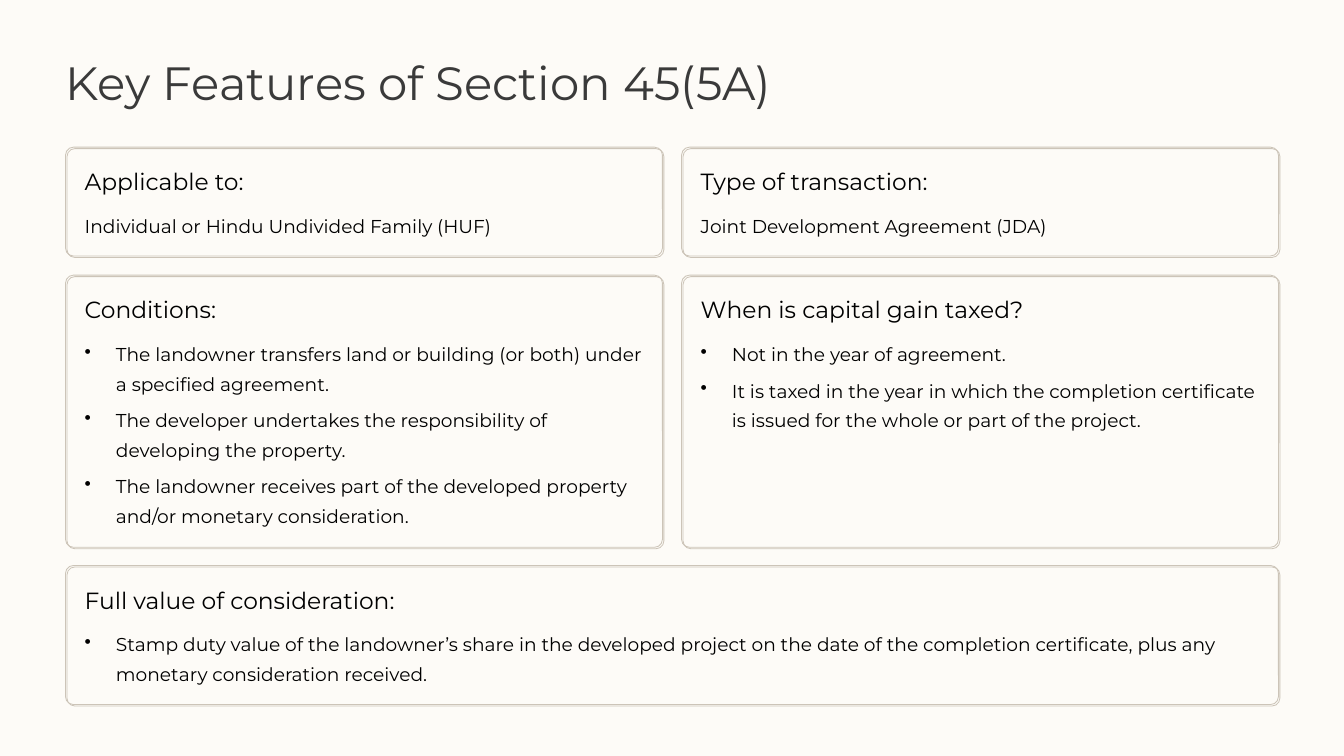
import lxml.etree
import pptx
import pptx.dml.color
import pptx.enum.shapes
import pptx.enum.text
import pptx.oxml.ns
import pptx.util

Inches = pptx.util.Inches
Pt = pptx.util.Pt
qn = pptx.oxml.ns.qn

FONT = "Montserrat"
PAPER, TITLE_INK, INK, EDGE = "FDFBF7", "3A3A3A", "000000", "CCC4B8"

# Card grid: two columns with an equal gap
LEFT, GAP, COLUMN = 0.65, 0.19, 5.92
RIGHT = LEFT + COLUMN + GAP
FULL = 2 * COLUMN + GAP
PADDING = 0.19
RADIUS = 0.078
HEADING_HEIGHT = 0.29
BODY_OFFSET = 0.6

# Left, top, width, height, heading, body lines, bulleted
CARDS = [
    (LEFT, 1.46, COLUMN, 1.08, "Applicable to:",
     ["Individual or Hindu Undivided Family (HUF)"], False),
    (RIGHT, 1.46, COLUMN, 1.08, "Type of transaction:",
     ["Joint Development Agreement (JDA)"], False),
    (LEFT, 2.73, COLUMN, 2.7, "Conditions:",
     ["The landowner transfers land or building (or both) under a specified agreement.",
      "The developer undertakes the responsibility of developing the property.",
      "The landowner receives part of the developed property and/or monetary consideration."],
     True),
    (RIGHT, 2.73, COLUMN, 2.7, "When is capital gain taxed?",
     ["Not in the year of agreement.",
      "It is taxed in the year in which the completion certificate is issued "
      "for the whole or part of the project."], True),
    (LEFT, 5.61, FULL, 1.38, "Full value of consideration:",
     ["Stamp duty value of the landowner’s share in the developed project on the date "
      "of the completion certificate, plus any monetary consideration received."], True),
]


def color(value):
    return pptx.dml.color.RGBColor.from_string(value)


def add_bullet(para):
    properties = para._p.get_or_add_pPr()
    properties.set("marL", str(Inches(0.31)))
    properties.set("indent", str(-Inches(0.31)))
    bullet = lxml.etree.SubElement(properties, qn("a:buChar"))
    bullet.set("char", "•")


def add_text(page, left, top, width, height, lines, size, spacing,
             ink=INK, bulleted=False):
    box = page.shapes.add_textbox(Inches(left), Inches(top), Inches(width), Inches(height))
    frame = box.text_frame
    frame.word_wrap = True
    frame.vertical_anchor = pptx.enum.text.MSO_ANCHOR.TOP
    frame.margin_left = frame.margin_right = frame.margin_top = frame.margin_bottom = 0
    for index, line in enumerate(lines):
        para = frame.add_paragraph() if index else frame.paragraphs[0]
        para.text = line
        para.line_spacing = Pt(spacing)
        if index:
            para.space_before = Pt(4.8)
        para.font.name = FONT
        para.font.size = Pt(size)
        para.font.color.rgb = color(ink)
        if bulleted:
            add_bullet(para)


def add_hard_shadow(shape):
    shape.shadow.inherit = False
    effects = shape._element.spPr.find(qn("a:effectLst"))
    shadow = lxml.etree.SubElement(effects, qn("a:outerShdw"))
    settings = {"blurRad": 0, "dist": Pt(1.5), "dir": 45 * 60000,
                "algn": "bl", "rotWithShape": 0}
    for name, value in settings.items():
        shadow.set(name, str(value))
    lxml.etree.SubElement(shadow, qn("a:srgbClr")).set("val", EDGE)


def add_card(page, left, top, width, height, heading, lines, bulleted):
    # Outline
    card = page.shapes.add_shape(
        pptx.enum.shapes.MSO_SHAPE.ROUNDED_RECTANGLE,
        Inches(left), Inches(top), Inches(width), Inches(height))
    card.adjustments[0] = RADIUS / height
    card.fill.background()
    card.line.color.rgb = color(EDGE)
    card.line.width = Pt(0.6)
    add_hard_shadow(card)

    # Heading and body
    text_left, text_width = left + PADDING, width - 2 * PADDING
    add_text(page, text_left, top + PADDING, text_width, HEADING_HEIGHT,
             [heading], 16.7, 20.8)
    add_text(page, text_left, top + BODY_OFFSET, text_width,
             height - BODY_OFFSET - PADDING, lines, 13.3, 21.2, bulleted=bulleted)


def main():
    deck = pptx.Presentation()
    deck.slide_width, deck.slide_height = Inches(13.33), Inches(7.5)
    page = deck.slides.add_slide(deck.slide_layouts[6])

    # Background
    page.background.fill.solid()
    page.background.fill.fore_color.rgb = color(PAPER)

    # Title, as wide as the card grid so that it stays on one line
    add_text(page, LEFT, 0.51, FULL, 0.58, ["Key Features of Section 45(5A)"],
             33.3, 41.7, ink=TITLE_INK)

    # Cards
    for card in CARDS:
        add_card(page, *card)

    deck.save("out.pptx")


if __name__ == "__main__":
    main()
